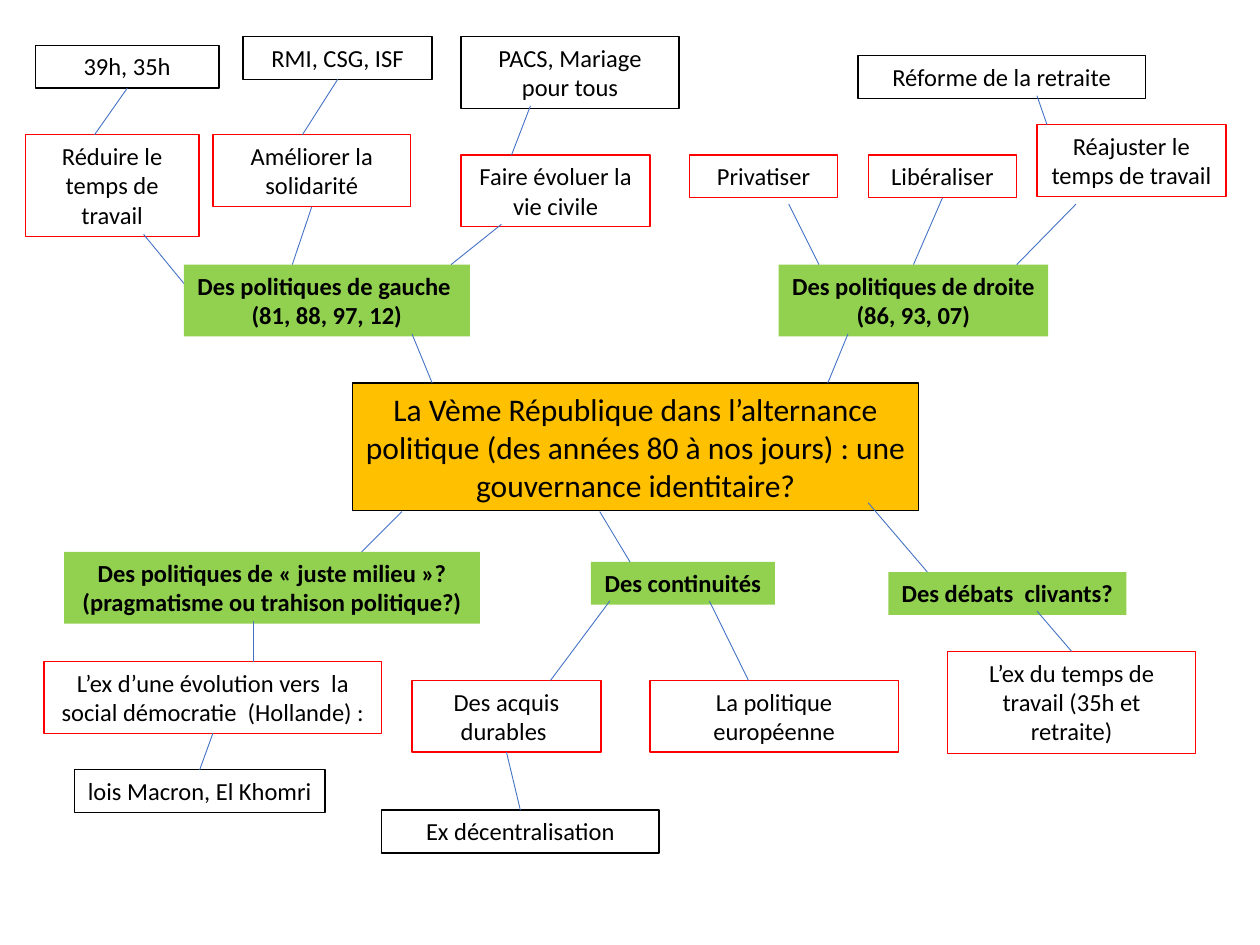
from pptx import Presentation
from pptx.dml.color import RGBColor
from pptx.enum.shapes import MSO_CONNECTOR
from pptx.enum.text import MSO_ANCHOR, MSO_AUTO_SIZE, PP_ALIGN
from pptx.oxml.ns import qn
from pptx.util import Inches, Pt
from lxml import etree

STRAIGHT = MSO_CONNECTOR.STRAIGHT
MIDDLE, CENTER = MSO_ANCHOR.MIDDLE, PP_ALIGN.CENTER
GROW = MSO_AUTO_SIZE.SHAPE_TO_FIT_TEXT
TOP, BOTTOM = 0, 2
TITLE_ONLY = 5

COLORS = {"topic": "FFC000", "theme": "92D050", "idea": "FF0000",
          "fact": "000000", "text": "000000", "link": "4472C4"}


def rgb(name):
    return RGBColor.from_string(COLORS[name])


def outline(shape, name):
    shape.line.color.rgb = rgb(name)
    shape.line.width = Pt(0.75)


def write(shape, text, size=14, bold=False, wrap=True):
    frame = shape.text_frame
    frame.text = text
    frame.word_wrap = wrap
    frame.auto_size = GROW
    for para in frame.paragraphs:
        para.alignment = CENTER
        for run in para.runs:
            run.font.name = "Calibri"
            run.font.size = Pt(size)
            run.font.bold = bold
            run.font.color.rgb = rgb("text")


def add_topic(slide, x, y, w, h, text):
    title = slide.shapes.title
    title.left, title.top = Inches(x), Inches(y)
    title.width, title.height = Inches(w), Inches(h)
    title.fill.solid()
    title.fill.fore_color.rgb = rgb("topic")
    outline(title, "fact")
    write(title, text, 18)
    title.text_frame.vertical_anchor = MIDDLE


def add_box(slide, kind, text, x, y, w, h, wrap=True):
    box = slide.shapes.add_textbox(Inches(x), Inches(y), Inches(w), Inches(h))
    theme = kind == "theme"
    if theme:
        box.fill.solid()
        box.fill.fore_color.rgb = rgb("theme")
    else:
        outline(box, kind)
    write(box, text, bold=theme, wrap=wrap and not theme)
    return box


def add_link(slide, start, end):
    line = slide.shapes.add_connector(
        STRAIGHT, *(Inches(v) for v in (*start, *end)))
    line.line.color.rgb = rgb("link")
    line.line.width = Pt(0.5)
    etree.SubElement(line._element.spPr, qn("a:effectLst"))
    return line


def add_branch(slide, left, top, boxes, links):
    """Place boxes and links from (left, top); a link end is a point
    or the name of a box and the side to join."""
    made = {name: add_box(slide, kind, text, left + x, top + y, *rest)
            for name, (kind, text, x, y, *rest) in boxes.items()}
    for ends in links:
        joins = [isinstance(end[0], str) for end in ends]
        spots = [(left, top) if join else (left + end[0], top + end[1])
                 for end, join in zip(ends, joins)]
        line = add_link(slide, *spots)
        for end, join, glue in zip(ends, joins,
                                   (line.begin_connect, line.end_connect)):
            if join:
                glue(made[end[0]], end[1])


BRANCHES = [
    (0.2, 0.29, {
        "left": ("theme", "Des politiques de gauche \n(81, 88, 97, 12)",
                 1.26, 1.81, 2.27, 0.57),
        "work": ("idea", "Réduire le temps de travail", 0, 0.78, 1.38, 0.81),
        "care": ("idea", "Améliorer la solidarité", 1.49, 0.78, 1.57, 0.57),
        "civil": ("idea", "Faire évoluer la vie civile",
                  3.46, 0.94, 1.5, 0.57),
        "hours": ("fact", "39h, 35h", 0.08, 0.07, 1.46, 0.34),
        "tax": ("fact", "RMI, CSG, ISF", 1.73, 0, 1.5, 0.34),
        "wed": ("fact", "PACS, Mariage pour tous", 3.46, 0, 1.73, 0.57),
    }, [
        ((1.26, 1.96), (0.94, 1.57)),
        ((2.12, 1.81), ("care", BOTTOM)),
        ((3.38, 1.81), (3.78, 1.49)),
        ((0.55, 0.78), ("hours", BOTTOM)),
        ((2.2, 0.78), ("tax", BOTTOM)),
        ((3.86, 0.94), (4.01, 0.55)),
        ((3.23, 2.75), (3.07, 2.36)),
    ]),
    (5.47, 0.44, {
        "right": ("theme", "Des politiques de droite\n(86, 93, 07)",
                  0.71, 1.66, 2.14, 0.57),
        "sell": ("idea", "Privatiser", 0, 0.79, 1.18, 0.34),
        "free": ("idea", "Libéraliser", 1.42, 0.79, 1.18, 0.34),
        "work": ("idea", "Réajuster le temps de travail",
                 2.76, 0.55, 1.5, 0.57),
        "pension": ("fact", "Réforme de la retraite", 1.34, 0, 2.28, 0.34),
    }, [
        ((1.03, 1.66), (0.79, 1.18)),
        ((1.78, 1.66), ("free", BOTTOM)),
        ((2.6, 1.66), (3.07, 1.18)),
        ((2.84, 0.55), (2.76, 0.32)),
        ((1.1, 2.6), (1.26, 2.21)),
    ]),
    (0.35, 4.06, {
        "middle": ("theme", "Des politiques de «\u00a0juste milieu\u00a0»?\n"
                   "(pragmatisme ou trahison politique?)",
                   0.16, 0.32, 3.3, 0.57),
        "social": ("idea", "L’ex d’une évolution vers  la social démocratie"
                   "  (Hollande) :", 0, 1.19, 2.68, 0.57),
        "laws": ("fact", "lois Macron, El Khomri",
                 0.24, 2.05, 1.99, 0.34, False),
    }, [
        ((2.84, 0), (2.52, 0.32)),
        ((1.66, 0.87), (1.66, 1.19)),
        (("social", BOTTOM), ("laws", TOP)),
    ]),
    (3.03, 4.06, {
        "same": ("theme", "Des continuités", 1.66, 0.4, 1.46, 0.34),
        "gains": ("idea", "Des acquis durables ", 0.24, 1.34, 1.5, 0.57),
        "europe": ("idea", "La politique européenne",
                   2.13, 1.34, 1.97, 0.57),
        "local": ("fact", "Ex décentralisation", 0, 2.37, 2.2, 0.34),
    }, [
        ((1.73, 0), (1.97, 0.4)),
        ((1.81, 0.71), (1.34, 1.34)),
        ((2.6, 0.71), (2.91, 1.34)),
        (("gains", BOTTOM), ("local", TOP)),
    ]),
    (6.89, 3.99, {
        "debate": ("theme", "Des débats  clivants?", 0.16, 0.55, 1.89, 0.34),
        "work": ("idea", "L’ex du temps de travail (35h et retraite)",
                 0.63, 1.18, 1.97, 0.81),
    }, [
        ((0, 0), (0.47, 0.55)),
        ((1.34, 0.86), ("work", TOP)),
    ]),
]


def main():
    deck = Presentation()
    deck.slide_width, deck.slide_height = Inches(10), Inches(7.5)
    slide = deck.slides.add_slide(deck.slide_layouts[TITLE_ONLY])
    add_topic(slide, 2.8, 3.04, 4.49, 1.01,
              "La Vème République dans l’alternance politique (des années 80 "
              "à nos jours) : une gouvernance identitaire?")
    for branch in BRANCHES:
        add_branch(slide, *branch)
    deck.save("out.pptx")


if __name__ == "__main__":
    main()
